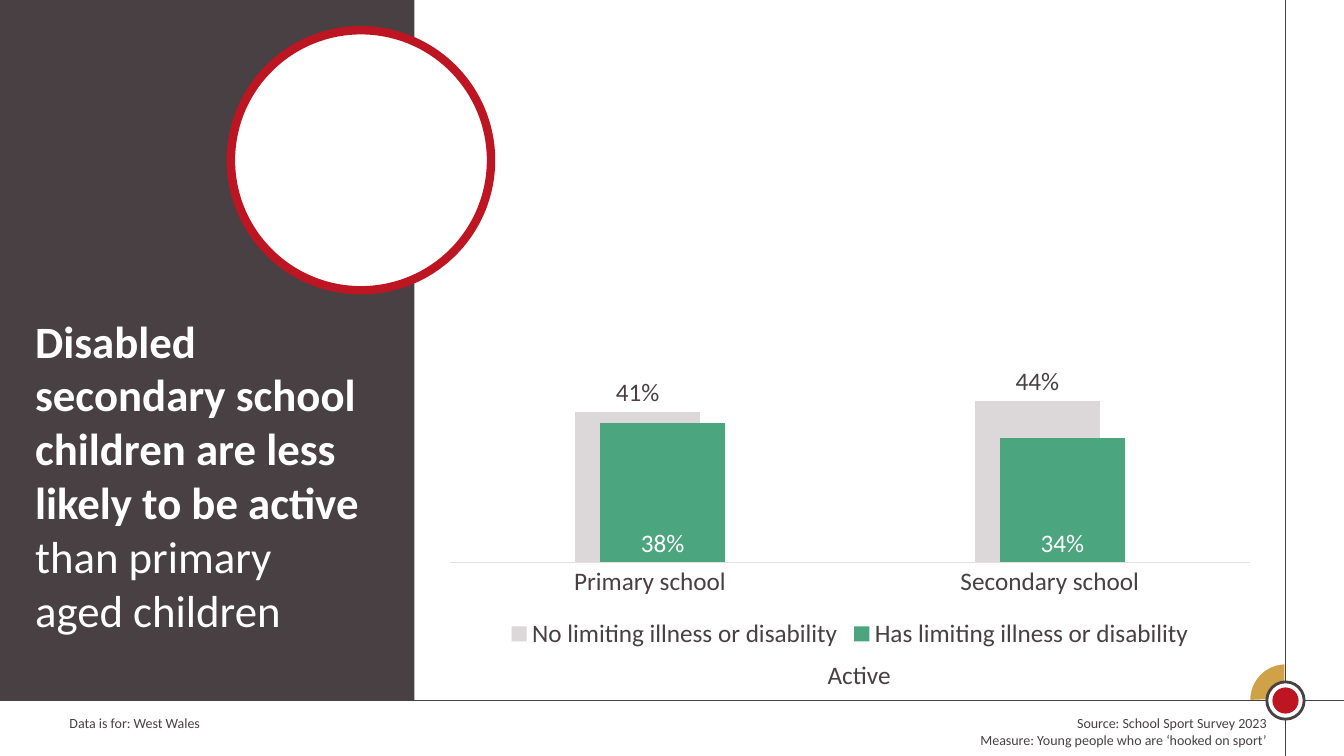
from lxml import etree
from pptx import Presentation
from pptx.chart.data import CategoryChartData
from pptx.dml.color import RGBColor
from pptx.enum.chart import XL_CHART_TYPE, XL_LABEL_POSITION, XL_LEGEND_POSITION, XL_TICK_MARK
from pptx.enum.shapes import MSO_CONNECTOR, MSO_SHAPE
from pptx.enum.text import PP_ALIGN
from pptx.oxml.ns import qn
from pptx.util import Inches, Pt

WIDTH, HEIGHT = 13.33, 7.5
RULE_X, RULE_Y = 12.75, 6.95
PANEL_WIDTH = 4.11
FONT = "Calibri"

CHARCOAL = RGBColor(0x48, 0x40, 0x43)
RED = RGBColor(0xBD, 0x16, 0x22)
GOLD = RGBColor(0xCF, 0xA1, 0x49)
GREEN = RGBColor(0x4B, 0xA5, 0x7E)
LIGHT_GREY = RGBColor(0xDC, 0xD7, 0xD9)
AXIS_GREY = RGBColor(0xE5, 0xE1, 0xE3)
WHITE = RGBColor(0xFF, 0xFF, 0xFF)

SCHOOLS = ("Primary school", "Secondary school")
SERIES = (
    ("No limiting illness or disability", (0.41, 0.44), LIGHT_GREY, CHARCOAL, XL_LABEL_POSITION.OUTSIDE_END),
    ("Has limiting illness or disability", (0.38, 0.34), GREEN, WHITE, XL_LABEL_POSITION.INSIDE_BASE),
)
LEFT, RIGHT = PP_ALIGN.LEFT, PP_ALIGN.RIGHT
TEXTS = (
    ((0.59, 7.04, 4.39, 0.27), 10, CHARCOAL, LEFT, [[("Data is for: West Wales", False)]]),
    ((6.19, 7.04, 6.47, 0.44), 10, CHARCOAL, RIGHT, [
        [("Source: School Sport Survey 2023", False)],
        [("Measure: Young people who are ‘hooked on sport’", False)],
    ]),
    ((0.25, 3.06, 3.43, 3.87), 32, WHITE, LEFT, [[
        ("Disabled secondary school children are less likely to be active ", True),
        ("than primary aged children", False),
    ]]),
    ((8.11, 6.49, 1.22, 0.4), 18, CHARCOAL, LEFT, [[("Active", False)]]),
)


def style_font(font, size, color):
    font.name = FONT
    font.size = Pt(size)
    font.color.rgb = color


def add_filled_shape(slide, kind, box, fill, line=None, line_width=0):
    shape = slide.shapes.add_shape(kind, *map(Inches, box))
    shape.shadow.inherit = False
    shape.fill.solid()
    shape.fill.fore_color.rgb = fill
    if line is None:
        shape.line.fill.background()
    else:
        shape.line.color.rgb = line
        shape.line.width = Pt(line_width)
    return shape


def add_circle(slide, center_x, center_y, diameter, *colors):
    box = (center_x - diameter / 2, center_y - diameter / 2, diameter, diameter)
    return add_filled_shape(slide, MSO_SHAPE.OVAL, box, *colors)


def add_rule(slide, *ends):
    connector = slide.shapes.add_connector(MSO_CONNECTOR.STRAIGHT, *map(Inches, ends))
    connector.line.color.rgb = CHARCOAL
    connector.line.width = Pt(1)
    etree.SubElement(connector.element.spPr, qn("a:effectLst"))


def add_text(slide, box, size, color, alignment, paragraphs):
    frame = slide.shapes.add_textbox(*map(Inches, box)).text_frame
    frame.word_wrap = True
    for index, runs in enumerate(paragraphs):
        paragraph = frame.add_paragraph() if index else frame.paragraphs[0]
        paragraph.alignment = alignment
        for text, bold in runs:
            run = paragraph.add_run()
            run.text = text
            run.font.bold = bold
            style_font(run.font, size, color)


def add_activity_chart(slide):
    data = CategoryChartData(number_format="0%")
    data.categories = SCHOOLS
    for name, values, *_ in SERIES:
        data.add_series(name, values)
    box = map(Inches, (4.3, 1.85, 8.26, 4.64))
    chart = slide.shapes.add_chart(XL_CHART_TYPE.COLUMN_CLUSTERED, *box, data).chart
    style_font(chart.font, 18, CHARCOAL)
    chart.has_title = False
    chart.has_legend = True
    chart.legend.position = XL_LEGEND_POSITION.BOTTOM
    chart.legend.include_in_layout = False
    style_font(chart.legend.font, 18, CHARCOAL)

    chart.value_axis.visible = False
    chart.value_axis.has_major_gridlines = False
    chart.value_axis.minimum_scale = 0
    chart.value_axis.maximum_scale = 1
    axis = chart.category_axis
    axis.major_tick_mark = XL_TICK_MARK.NONE
    axis.format.line.color.rgb = AXIS_GREY
    axis.format.line.width = Pt(0.75)
    style_font(axis.tick_labels.font, 18, CHARCOAL)

    plot = chart.plots[0]
    plot.vary_by_categories = False
    plot.gap_width = 200
    plot.overlap = 80
    for series, (_, _, fill, label_color, position) in zip(plot.series, SERIES):
        series.format.fill.solid()
        series.format.fill.fore_color.rgb = fill
        labels = series.data_labels
        labels.show_value = True
        labels.number_format = "0%"
        labels.number_format_is_linked = False
        labels.position = position
        style_font(labels.font, 18, label_color)


def main():
    presentation = Presentation()
    presentation.slide_width = Inches(WIDTH)
    presentation.slide_height = Inches(HEIGHT)
    slide = presentation.slides.add_slide(presentation.slide_layouts[6])

    pie = add_filled_shape(slide, MSO_SHAPE.PIE, (12.39, 6.58, 0.72, 0.72), GOLD, WHITE, 1.5)
    pie.adjustments[0] = 106.62
    pie.adjustments[1] = 162
    add_rule(slide, RULE_X, 0, RULE_X, HEIGHT)
    add_rule(slide, 0, RULE_Y, WIDTH, RULE_Y)
    add_circle(slide, RULE_X, RULE_Y, 0.37, WHITE, CHARCOAL, 2)
    add_circle(slide, RULE_X, RULE_Y, 0.26, RED)
    add_filled_shape(slide, MSO_SHAPE.RECTANGLE, (0, 0, PANEL_WIDTH, RULE_Y), CHARCOAL)
    add_circle(slide, 3.58, 1.59, 2.58, WHITE, RED, 6)
    for text in TEXTS:
        add_text(slide, *text)
    add_activity_chart(slide)
    presentation.save("out.pptx")


if __name__ == "__main__":
    main()
